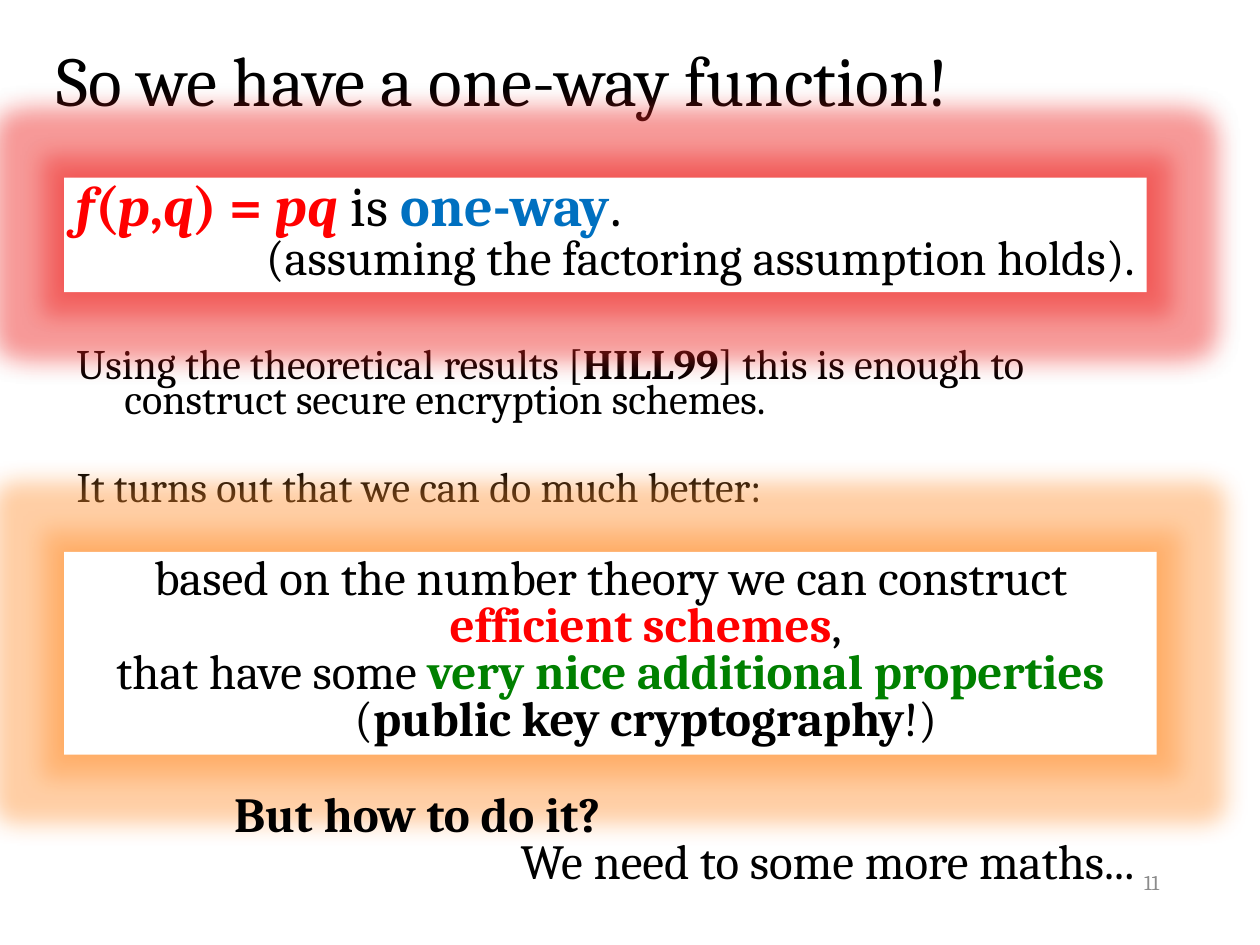
from dataclasses import dataclass
from typing import Optional

from lxml import etree
from pptx import Presentation
from pptx.dml.color import RGBColor
from pptx.enum.shapes import MSO_SHAPE
from pptx.enum.text import MSO_ANCHOR, MSO_AUTO_SIZE, PP_ALIGN
from pptx.oxml.ns import qn
from pptx.util import Inches, Pt

LEFT, CENTER, RIGHT = PP_ALIGN.LEFT, PP_ALIGN.CENTER, PP_ALIGN.RIGHT
TOP, MIDDLE = MSO_ANCHOR.TOP, MSO_ANCHOR.MIDDLE
FIT_SHAPE, FIT_NONE = MSO_AUTO_SIZE.SHAPE_TO_FIT_TEXT, MSO_AUTO_SIZE.NONE
RECTANGLE = MSO_SHAPE.RECTANGLE

FONT = "Cambria"
BLACK = RGBColor(0x00, 0x00, 0x00)
WHITE = RGBColor(0xFF, 0xFF, 0xFF)
GRAY = RGBColor(0x8C, 0x8C, 0x8C)
RED = RGBColor(0xFF, 0x00, 0x00)
BLUE = RGBColor(0x00, 0x70, 0xC0)
GREEN = RGBColor(0x00, 0x80, 0x00)
RED_GLOW = RGBColor(0xEE, 0x23, 0x20)
ORANGE_GLOW = RGBColor(0xFF, 0x90, 0x30)


@dataclass
class Span:
    text: str
    color: RGBColor = BLACK
    bold: bool = False
    italic: bool = False
    break_after: bool = False


@dataclass
class Para:
    spans: list[Span]
    size: float
    align: PP_ALIGN = LEFT
    line_spacing: float = 1.0
    space_before: float = 0
    hanging: float = 0


@dataclass
class Box:
    left: float
    top: float
    width: float
    height: float
    paras: list[Para]
    anchor: MSO_ANCHOR = TOP
    grow: bool = False
    glow: Optional[RGBColor] = None


def add_span(paragraph, text: str, *, size: float, color: RGBColor,
             bold: bool, italic: bool) -> None:
    run = paragraph.add_run()
    run.text = text
    run.font.name = FONT
    run.font.size = Pt(size)
    run.font.bold = bold
    run.font.italic = italic
    run.font.color.rgb = color


def add_glow(shape, color: RGBColor) -> None:
    shape.shadow.inherit = False
    effects = shape.element.spPr.find(qn("a:effectLst"))
    layers = (
        ("a:glow", {"rad": Inches(0.37)}),
        ("a:outerShdw", {"blurRad": Inches(0.13), "dist": 0, "algn": "ctr"}),
    )
    for tag, settings in layers:
        layer = etree.SubElement(effects, qn(tag))
        for name, value in settings.items():
            layer.set(name, str(value))
        tint = etree.SubElement(layer, qn("a:srgbClr"), val=str(color))
        etree.SubElement(tint, qn("a:alpha"), val="40000")


def fill_paragraph(paragraph, para: Para) -> None:
    paragraph.alignment = para.align
    paragraph.line_spacing = para.line_spacing
    paragraph.space_before = Pt(para.space_before)
    if para.hanging:
        properties = paragraph._p.get_or_add_pPr()
        properties.set("marL", str(Inches(para.hanging)))
        properties.set("indent", str(-Inches(para.hanging)))
    for span in para.spans:
        add_span(paragraph, span.text, size=para.size, color=span.color,
                 bold=span.bold, italic=span.italic)
        if span.break_after:
            paragraph.add_line_break()


def add_box(page, box: Box) -> None:
    place = [Inches(value) for value in (box.left, box.top, box.width, box.height)]
    if box.glow is None:
        shape = page.shapes.add_textbox(*place)
    else:
        shape = page.shapes.add_shape(RECTANGLE, *place)
        shape.fill.solid()
        shape.fill.fore_color.rgb = WHITE
        shape.line.fill.background()
        add_glow(shape, box.glow)
    frame = shape.text_frame
    frame.word_wrap = True
    frame.auto_size = FIT_SHAPE if box.grow else FIT_NONE
    frame.vertical_anchor = box.anchor
    for index, para in enumerate(box.paras):
        paragraph = frame.add_paragraph() if index else frame.paragraphs[0]
        fill_paragraph(paragraph, para)


SLIDE_NUMBER = Box(6.97, 6.8, 2.33, 0.4, [Para([Span("11", GRAY)], 12, RIGHT)], MIDDLE)
TITLE = Box(0.35, 0, 8.89, 1.25,
            [Para([Span("So we have a one-way function!")], 40)], MIDDLE)
BODY = Box(0.51, 2.74, 8.67, 1.48, [
    Para([
        Span("Using the theoretical results ["),
        Span("HILL99", bold=True),
        Span("] this is enough to construct secure encryption schemes."),
    ], 24, line_spacing=0.7, space_before=4.8, hanging=0.38),
    Para([Span("It turns out that we can do much better:")],
         24, line_spacing=0.7, space_before=30, hanging=0.38),
])
CLAIM = Box(0.51, 1.41, 8.59, 0.91, [
    Para([
        Span("f", RED, True, True),
        Span("(", RED, True),
        Span("p", RED, True, True),
        Span(",", RED, True),
        Span("q", RED, True, True),
        Span(") = ", RED, True),
        Span("pq ", RED, True, True),
        Span("is "),
        Span("one-way", BLUE, True),
        Span("."),
    ], 32, line_spacing=0.8),
    Para([Span("(assuming the factoring assumption holds).")],
         28, RIGHT, line_spacing=0.8),
], grow=True, glow=RED_GLOW)
SCHEMES = Box(0.51, 4.38, 8.67, 1.61, [
    Para([
        Span("based on the number theory we can construct "),
        Span("efficient schemes", RED, True),
        Span(","),
    ], 28, CENTER, line_spacing=0.8, hanging=0.56),
    Para([
        Span("that have some "),
        Span("very nice additional properties", GREEN, True, break_after=True),
        Span("("),
        Span("public key cryptography", bold=True),
        Span("!)"),
    ], 28, CENTER, line_spacing=0.8, hanging=0.56),
], grow=True, glow=ORANGE_GLOW)
QUESTION = Box(1.76, 6.26, 7.34, 0.86, [
    Para([Span("But how to do it?", bold=True)], 28, line_spacing=0.8),
    Para([Span("We need to some more maths...")], 28, RIGHT, line_spacing=0.8),
], grow=True)


def main() -> None:
    deck = Presentation()
    deck.slide_width = Inches(10)
    deck.slide_height = Inches(7.5)
    page = deck.slides.add_slide(deck.slide_layouts[6])
    for box in (SLIDE_NUMBER, TITLE, BODY, CLAIM, SCHEMES, QUESTION):
        add_box(page, box)
    deck.save("out.pptx")


if __name__ == "__main__":
    main()
